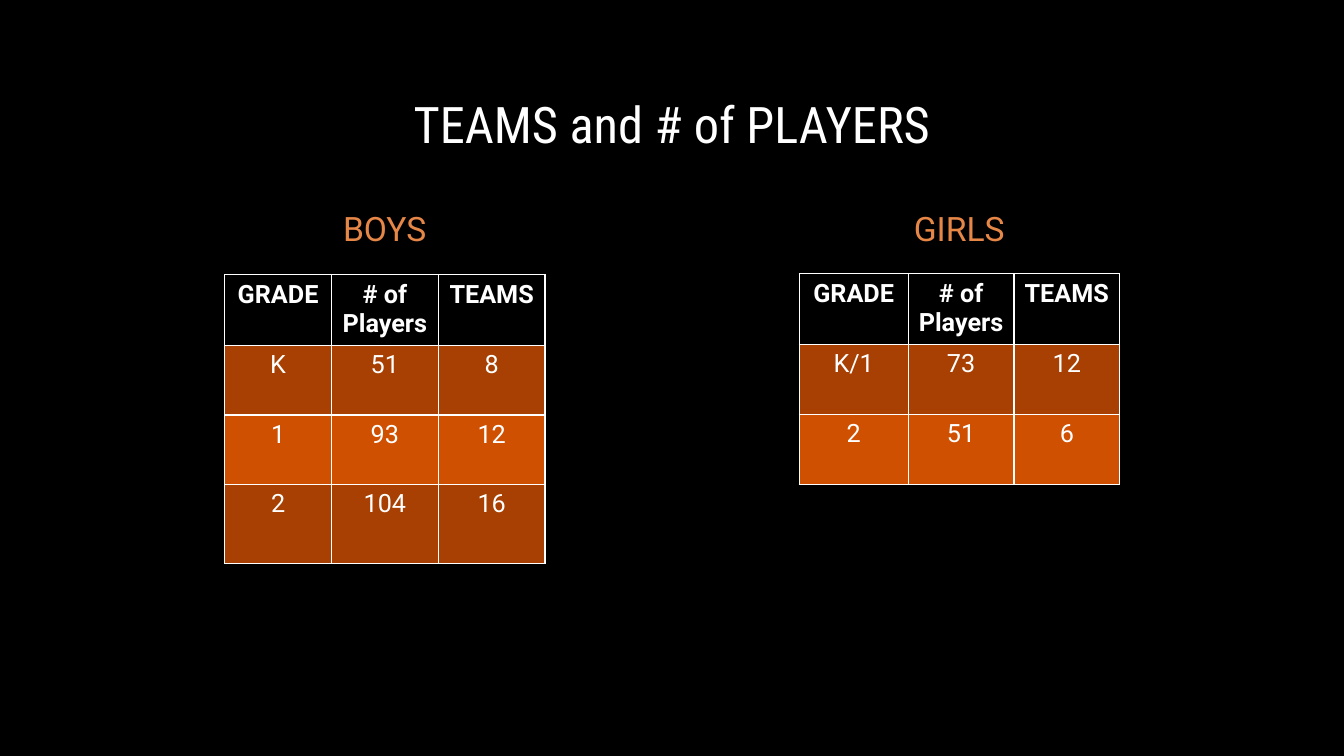
from dataclasses import dataclass

from lxml import etree
from pptx import Presentation
from pptx.dml.color import RGBColor
from pptx.enum.text import MSO_ANCHOR, PP_ALIGN
from pptx.oxml.ns import qn
from pptx.slide import Slide
from pptx.table import _Cell
from pptx.text.text import TextFrame
from pptx.util import Pt

CENTER = PP_ALIGN.CENTER
TOP = MSO_ANCHOR.TOP
MIDDLE = MSO_ANCHOR.MIDDLE
BOTTOM = MSO_ANCHOR.BOTTOM

BLACK = "000000"
WHITE = "FFFFFF"
ORANGE = "E68747"
BANDS = ("A74002", "D05002")
BODY_FONT = "Roboto"
TITLE_FONT = "Roboto Condensed"
HEADER = ("GRADE", "# of Players", "TEAMS")


@dataclass(frozen=True)
class Label:
    text: str
    x: float
    y: float
    w: float
    h: float
    size: float
    font: str
    color: str
    anchor: MSO_ANCHOR


@dataclass(frozen=True)
class Grid:
    x: float
    y: float
    widths: tuple[float, ...]
    heights: tuple[float, ...]
    rows: tuple[tuple[str, ...], ...]


LABELS = (
    Label("TEAMS and # of PLAYERS", 84, 24, 792, 90, 36, TITLE_FONT, WHITE, BOTTOM),
    Label("BOYS", 84, 132.5, 381.6, 64.8, 24, BODY_FONT, ORANGE, MIDDLE),
    Label("GIRLS", 494.4, 132.5, 381.6, 64.8, 24, BODY_FONT, ORANGE, MIDDLE),
)

GRIDS = (
    Grid(160.5, 196.3, (76.3,) * 3, (49.7, 49.7, 49.7, 56.2),
         (HEADER, ("K", "51", "8"), ("1", "93", "12"), ("2", "104", "16"))),
    Grid(570.9, 195.6, (77.8, 75.6, 75.6), (50.4, 50, 50),
         (HEADER, ("K/1", "73", "12"), ("2", "51", "6"))),
)


def rgb(color: str) -> RGBColor:
    return RGBColor.from_string(color)


def write(tf: TextFrame, text: str, size: float, font: str, color: str,
          bold: bool = False, spacing: float = 1.0) -> None:
    p = tf.paragraphs[0]
    p.alignment = CENTER
    p.line_spacing = spacing
    r = p.add_run()
    r.text = text
    r.font.size = Pt(size)
    r.font.name = font
    r.font.bold = bold
    r.font.color.rgb = rgb(color)


def add_label(s: Slide, label: Label) -> None:
    sp = s.shapes.add_textbox(Pt(label.x), Pt(label.y), Pt(label.w), Pt(label.h))
    tf = sp.text_frame
    tf.word_wrap = True
    tf.vertical_anchor = label.anchor
    write(tf, label.text, label.size, label.font, label.color, spacing=0.9)


def set_borders(cell: _Cell, color: str, width: float) -> None:
    tc_pr = cell._tc.get_or_add_tcPr()
    for i, side in enumerate(("lnL", "lnR", "lnT", "lnB")):
        ln = etree.Element(qn(f"a:{side}"), w=str(Pt(width)))
        fill = etree.SubElement(ln, qn("a:solidFill"))
        etree.SubElement(fill, qn("a:srgbClr"), val=color)
        tc_pr.insert(i, ln)


def add_grid(s: Slide, grid: Grid) -> None:
    frame = s.shapes.add_table(
        len(grid.heights), len(grid.widths), Pt(grid.x), Pt(grid.y),
        Pt(sum(grid.widths)), Pt(sum(grid.heights)))
    table = frame.table
    for column, width in zip(table.columns, grid.widths):
        column.width = Pt(width)
    for i, (height, values) in enumerate(zip(grid.heights, grid.rows)):
        table.rows[i].height = Pt(height)
        fill = BANDS[(i - 1) % 2] if i else BLACK
        for j, value in enumerate(values):
            cell = table.cell(i, j)
            cell.vertical_anchor = TOP
            cell.fill.solid()
            cell.fill.fore_color.rgb = rgb(fill)
            set_borders(cell, WHITE, 1)
            write(cell.text_frame, value, 18, BODY_FONT, WHITE, bold=i == 0)


def main() -> None:
    prs = Presentation()
    prs.slide_width, prs.slide_height = Pt(960), Pt(540)
    s = prs.slides.add_slide(prs.slide_layouts[6])
    s.background.fill.solid()
    s.background.fill.fore_color.rgb = rgb(BLACK)
    for label in LABELS:
        add_label(s, label)
    for grid in GRIDS:
        add_grid(s, grid)
    prs.save("out.pptx")


if __name__ == "__main__":
    main()
